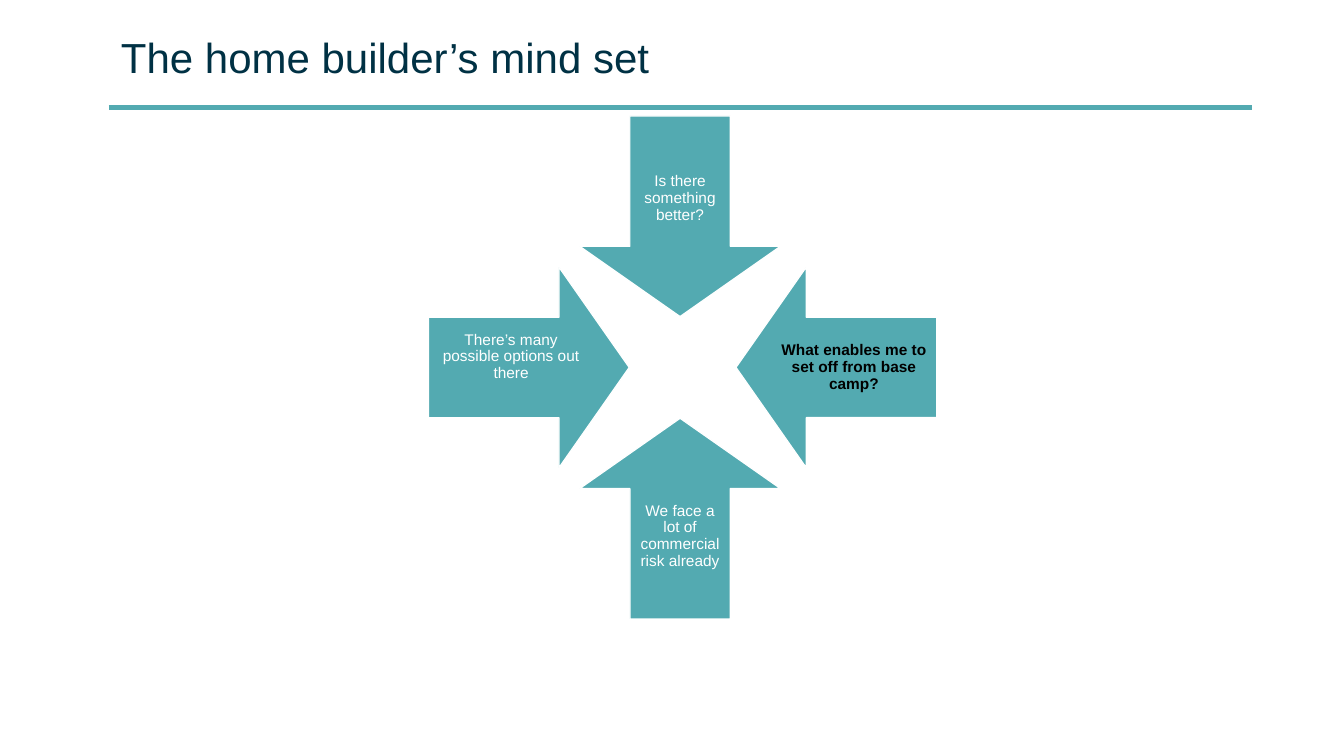
import pptx
import pptx.dml.color
import pptx.enum.shapes
import pptx.enum.text
import pptx.oxml.ns
import pptx.util
from lxml import etree

TEAL = pptx.dml.color.RGBColor(0x53, 0xAA, 0xB1)
NAVY = pptx.dml.color.RGBColor(0x00, 0x31, 0x44)
WHITE = pptx.dml.color.RGBColor(0xFF, 0xFF, 0xFF)
BLACK = pptx.dml.color.RGBColor(0x00, 0x00, 0x00)

ROWS = 15
HUB = (13.49, 7.29)
ARROW_SIZE = 3.98
LABEL_LENGTH = 3.28
LABEL_WIDTH = 1.98
INSET = 0.18

ARROWS = [
    ("Is there something better?", (0, -1), 3, 0, {}),
    ("What enables me to set off from base camp?", (1, 0), 3.1, 90,
     {"color": BLACK, "bold": True}),
    ("We face a lot of commercial risk already", (0, 1), 3, 180, {}),
    ("There’s many possible options out there", (-1, 0), 3, 270,
     {"bottom": 0.6}),
]


def write_text(frame, text, size, color, bold=False, font="Arial",
               align=pptx.enum.text.PP_ALIGN.LEFT, spacing=1.0, after=0):
    frame.word_wrap = True
    frame.auto_size = pptx.enum.text.MSO_AUTO_SIZE.NONE
    frame.vertical_anchor = pptx.enum.text.MSO_ANCHOR.MIDDLE
    paragraph = frame.paragraphs[0]
    paragraph.alignment = align
    paragraph.line_spacing = spacing
    paragraph.space_before = pptx.util.Pt(0)
    paragraph.space_after = pptx.util.Pt(after)
    run = paragraph.add_run()
    run.text = text
    run.font.name = font
    run.font.size = pptx.util.Pt(size)
    run.font.bold = bold
    run.font.color.rgb = color


class SlideBuilder:
    def __init__(self, presentation):
        self.unit = presentation.slide_height / ROWS
        self.accent = TEAL
        self.slide = presentation.slides.add_slide(presentation.slide_layouts[5])

    def span(self, cells):
        return pptx.util.Emu(round(cells * self.unit))

    def centered(self, center, size):
        corner = [middle - length / 2 for middle, length in zip(center, size)]
        return [self.span(cells) for cells in (*corner, *size)]

    def title(self, text, left, top, width, height):
        shape = self.slide.shapes.title
        shape.left, shape.top = self.span(left), self.span(top)
        shape.width, shape.height = self.span(width), self.span(height)
        write_text(shape.text_frame, text, 30, NAVY)

    def rule(self, left, right, row):
        connector = self.slide.shapes.add_connector(
            pptx.enum.shapes.MSO_CONNECTOR.STRAIGHT,
            self.span(left), self.span(row), self.span(right), self.span(row))
        connector.line.color.rgb = self.accent
        connector.line.width = pptx.util.Pt(3.5)
        properties = connector._element.spPr
        etree.SubElement(properties, pptx.oxml.ns.qn("a:effectLst"))

    def arrow(self, center, rotation):
        shape = self.slide.shapes.add_shape(
            pptx.enum.shapes.MSO_SHAPE.DOWN_ARROW,
            *self.centered(center, (ARROW_SIZE, ARROW_SIZE)))
        shape.adjustments[0] = 0.5
        shape.adjustments[1] = 0.35
        shape.rotation = rotation
        shape.shadow.inherit = False
        shape.fill.solid()
        shape.fill.fore_color.rgb = self.accent
        shape.line.color.rgb = WHITE
        shape.line.width = pptx.util.Pt(0.85)

    def label(self, text, center, size, color=WHITE, bold=False, bottom=INSET):
        box = self.slide.shapes.add_textbox(*self.centered(center, size))
        frame = box.text_frame
        frame.margin_left = frame.margin_right = self.span(INSET)
        frame.margin_top = self.span(INSET)
        frame.margin_bottom = self.span(bottom)
        write_text(frame, text, 11, color, bold=bold, spacing=0.9, after=3.85,
                   align=pptx.enum.text.PP_ALIGN.CENTER)

    def labelled_arrow(self, text, direction, reach, rotation, style):
        def along(distance):
            return [middle + step * distance
                    for middle, step in zip(HUB, direction)]

        size = (LABEL_LENGTH, LABEL_WIDTH) if direction[0] else (LABEL_WIDTH, LABEL_LENGTH)
        self.arrow(along(reach), rotation)
        self.label(text, along(reach + (ARROW_SIZE - LABEL_LENGTH) / 2), size, **style)


def main():
    presentation = pptx.Presentation()
    presentation.slide_width = pptx.util.Inches(13.33)
    presentation.slide_height = pptx.util.Inches(7.5)
    builder = SlideBuilder(presentation)
    builder.rule(2.16, 24.84, 2.14)
    builder.title("The home builder’s mind set", 2.2, 0.14, 22.66, 1.96)
    for arrow in ARROWS:
        builder.labelled_arrow(*arrow)
    presentation.save("out.pptx")


if __name__ == "__main__":
    main()
